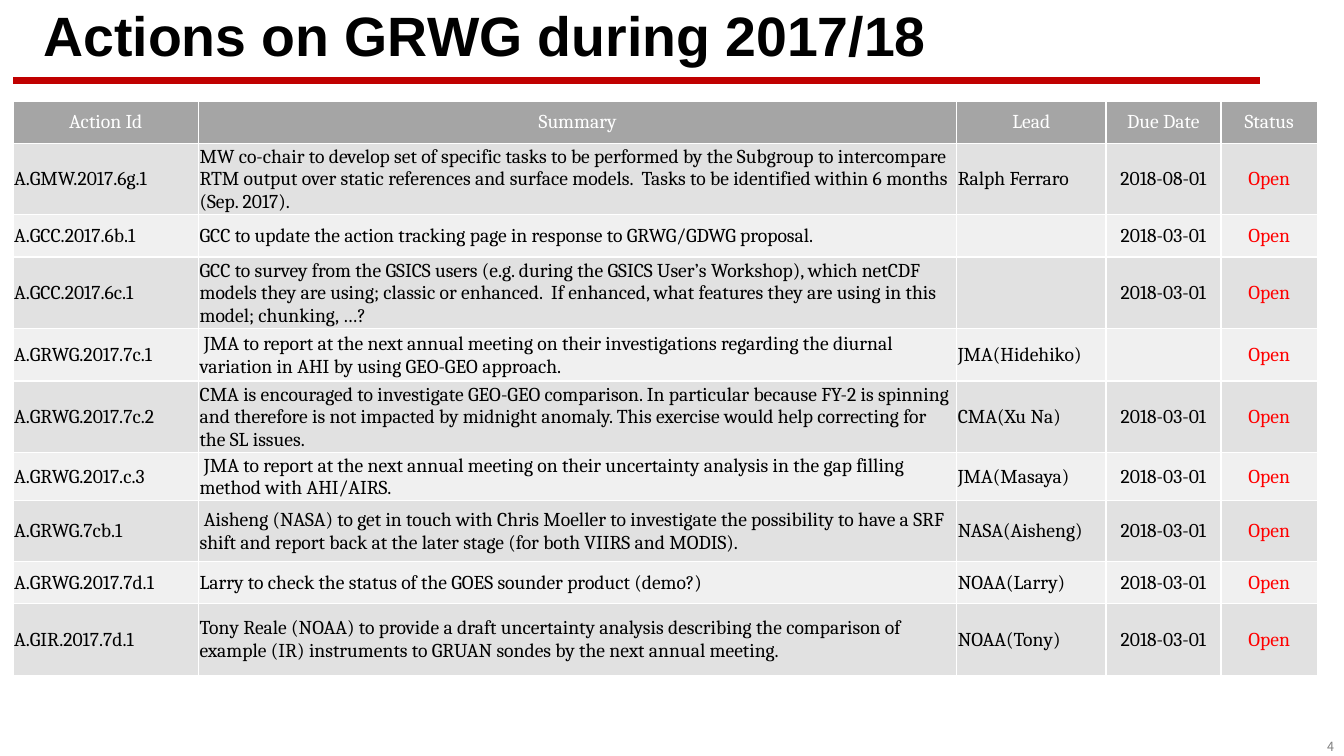
from lxml import etree
from pptx import Presentation
from pptx.dml.color import RGBColor
from pptx.enum.shapes import MSO_CONNECTOR
from pptx.enum.text import MSO_ANCHOR, PP_ALIGN
from pptx.oxml.ns import qn
from pptx.util import Inches, Pt

LEFT, CENTER, RIGHT = PP_ALIGN.LEFT, PP_ALIGN.CENTER, PP_ALIGN.RIGHT
MIDDLE = MSO_ANCHOR.MIDDLE
STRAIGHT = MSO_CONNECTOR.STRAIGHT
TITLE_ONLY = 5

BLACK, WHITE, RED = "000000", "FFFFFF", "FF0000"
HEADER_FILL = "A5A5A5"
BAND_FILLS = ("E1E1E1", "F0F0F0")

COLUMN_WIDTHS = (1.84, 7.52, 1.48, 1.14, 0.96)
COLUMN_ALIGNS = (LEFT, LEFT, LEFT, CENTER, CENTER)
COLUMN_COLORS = (BLACK, BLACK, BLACK, BLACK, RED)
ROW_HEIGHTS = (0.41, 0.71, 0.42, 0.71, 0.52, 0.71, 0.43, 0.6, 0.42, 0.71)
HEADER_MARGINS = {"margin_left": 0.12, "margin_top": 0.05, "margin_right": 0.12, "margin_bottom": 0.05}
BODY_MARGINS = {"margin_left": 0.01, "margin_top": 0.01, "margin_right": 0.01, "margin_bottom": 0}

HEADINGS = ("Action Id", "Summary", "Lead", "Due Date", "Status")
MARCH = "2018-03-01"
ACTIONS = (
    ("A.GMW.2017.6g.1",
     "MW co-chair to develop set of specific tasks to be performed by the Subgroup to intercompare "
     "RTM output over static references and surface models.  Tasks to be identified within 6 months "
     "(Sep. 2017).", "Ralph Ferraro", "2018-08-01"),
    ("A.GCC.2017.6b.1",
     "GCC to update the action tracking page in response to GRWG/GDWG proposal.", "", MARCH),
    ("A.GCC.2017.6c.1",
     "GCC to survey from the GSICS users (e.g. during the GSICS User’s Workshop), which netCDF "
     "models they are using; classic or enhanced.  If enhanced, what features they are using in this "
     "model; chunking, …?", "", MARCH),
    ("A.GRWG.2017.7c.1",
     " JMA to report at the next annual meeting on their investigations regarding the diurnal "
     "variation in AHI by using GEO-GEO approach.", "JMA(Hidehiko)", ""),
    ("A.GRWG.2017.7c.2",
     "CMA is encouraged to investigate GEO-GEO comparison. In particular because FY-2 is spinning "
     "and therefore is not impacted by midnight anomaly. This exercise would help correcting for "
     "the SL issues.", "CMA(Xu Na)", MARCH),
    ("A.GRWG.2017.c.3",
     " JMA to report at the next annual meeting on their uncertainty analysis in the gap filling "
     "method with AHI/AIRS.", "JMA(Masaya)", MARCH),
    ("A.GRWG.7cb.1",
     " Aisheng (NASA) to get in touch with Chris Moeller to investigate the possibility to have a SRF "
     "shift and report back at the later stage (for both VIIRS and MODIS).", "NASA(Aisheng)", MARCH),
    ("A.GRWG.2017.7d.1",
     "Larry to check the status of the GOES sounder product (demo?)", "NOAA(Larry)", MARCH),
    ("A.GIR.2017.7d.1",
     "Tony Reale (NOAA) to provide a draft uncertainty analysis describing the comparison of "
     "example (IR) instruments to GRUAN sondes by the next annual meeting.", "NOAA(Tony)", MARCH),
)


def rgb(color):
    return RGBColor.from_string(color)


def write(frame, text, font, size, color, align=LEFT, bold=False):
    """Fill a text frame with one formatted paragraph and return it."""
    paragraph = frame.paragraphs[0]
    paragraph.alignment = align
    run = paragraph.add_run()
    run.text = text
    for attribute, value in {"name": font, "size": Pt(size), "bold": bold}.items():
        setattr(run.font, attribute, value)
    run.font.color.rgb = rgb(color)
    return paragraph


def add_title(slide, left, top, width, height):
    title = slide.shapes.title
    box = {"left": left, "top": top, "width": width, "height": height}
    for attribute, value in box.items():
        setattr(title, attribute, Inches(value))
    title.text_frame.vertical_anchor = MIDDLE
    paragraph = write(title.text_frame, "Actions on GRWG during 2017/18", "Arial", 39.6, BLACK, bold=True)
    paragraph.line_spacing = 0.9


def add_title_rule(slide, left, top, width):
    y = Inches(top)
    rule = slide.shapes.add_connector(STRAIGHT, Inches(left), y, Inches(left + width), y)
    rule.line.color.rgb = rgb("C00000")
    rule.line.width = Pt(4.5)
    etree.SubElement(rule._element.spPr, qn("a:effectLst"))


def fill_cell(cell, text, fill, margins, color, align):
    cell.fill.solid()
    cell.fill.fore_color.rgb = rgb(fill)
    cell.vertical_anchor = MIDDLE
    for attribute, value in margins.items():
        setattr(cell, attribute, Inches(value))
    if text:
        write(cell.text_frame, text, "Cambria", 14, color, align)


def add_action_table(slide, left, top):
    table = slide.shapes.add_table(
        len(ROW_HEIGHTS), len(COLUMN_WIDTHS), Inches(left), Inches(top),
        Inches(sum(COLUMN_WIDTHS)), Inches(sum(ROW_HEIGHTS))).table
    for column, width in zip(table.columns, COLUMN_WIDTHS):
        column.width = Inches(width)
    for row, height in zip(table.rows, ROW_HEIGHTS):
        row.height = Inches(height)
    for column, heading in enumerate(HEADINGS):
        fill_cell(table.cell(0, column), heading, HEADER_FILL, HEADER_MARGINS, WHITE, CENTER)
    for row, action in enumerate(ACTIONS):
        entries = zip((*action, "Open"), COLUMN_COLORS, COLUMN_ALIGNS)
        for column, (text, color, align) in enumerate(entries):
            fill_cell(table.cell(row + 1, column), text, BAND_FILLS[row % 2], BODY_MARGINS, color, align)


def add_page_number(slide, left, top, width, height):
    page_number = slide.shapes.add_textbox(Inches(left), Inches(top), Inches(width), Inches(height))
    page_number.text_frame.word_wrap = True
    write(page_number.text_frame, "4", "Noto Sans CJK KR", 9, "808080", RIGHT)


def main():
    presentation = Presentation()
    presentation.slide_width = Inches(13.33)
    presentation.slide_height = Inches(7.5)
    slide = presentation.slides.add_slide(presentation.slide_layouts[TITLE_ONLY])
    add_title_rule(slide, 0.13, 0.8, 12.37)
    add_page_number(slide, 12.19, 7.28, 1.14, 0.25)
    add_title(slide, 0.33, 0.08, 11.5, 0.6)
    add_action_table(slide, 0.13, 1.01)
    presentation.save("out.pptx")


if __name__ == "__main__":
    main()
